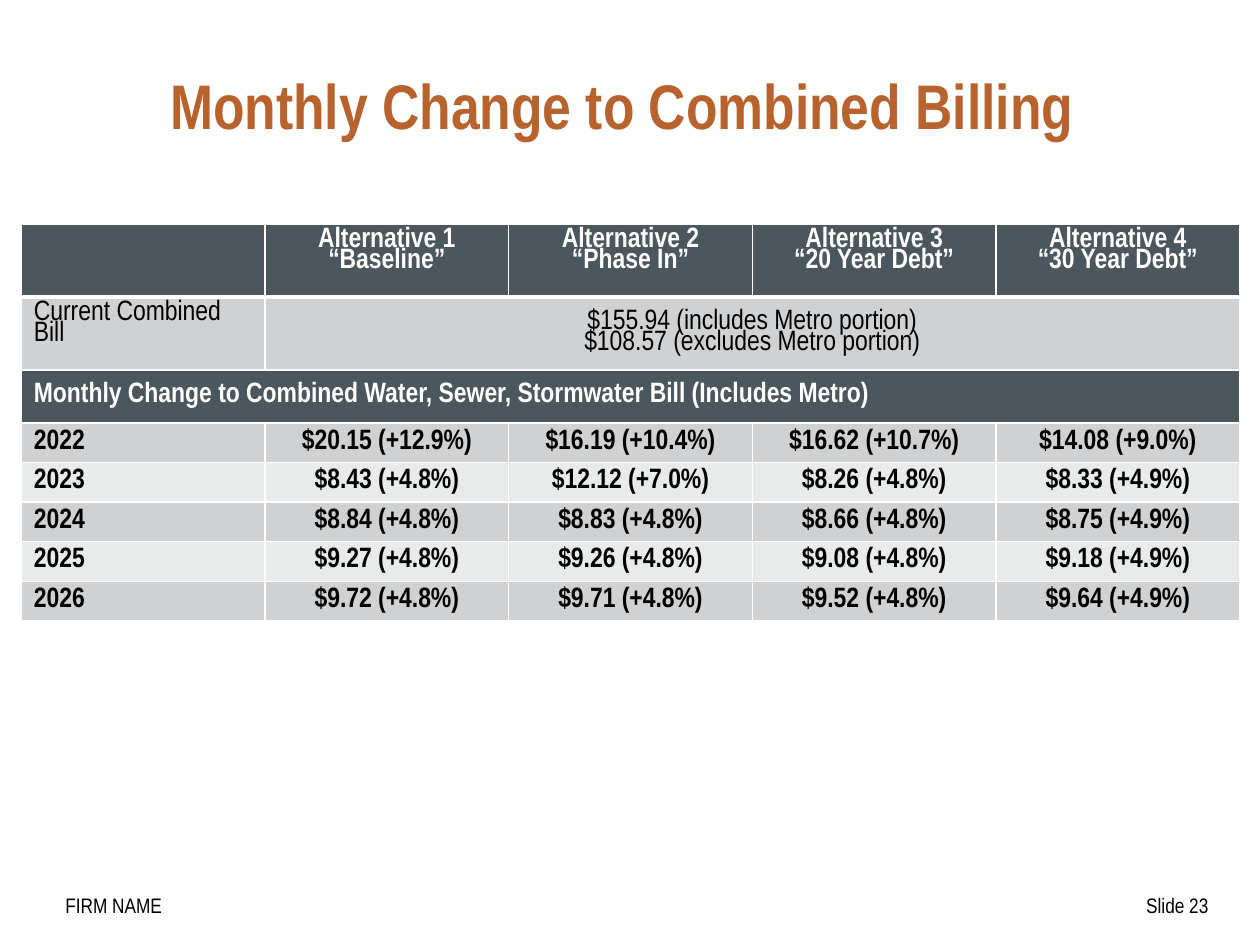
from lxml import etree
from pptx import Presentation
from pptx.dml import color
from pptx.enum import text
from pptx.oxml import ns
from pptx.util import Cm, Pt

FONT = "Arial Narrow"
COLORS = {
    "title": "B8632E", "header": "4B575D", "odd": "D0D1D2",
    "even": "E9EAEA", "white": "FFFFFF", "black": "000000",
}
LEFT, CENTER, RIGHT = text.PP_ALIGN.LEFT, text.PP_ALIGN.CENTER, text.PP_ALIGN.RIGHT
TOP, MIDDLE = text.MSO_ANCHOR.TOP, text.MSO_ANCHOR.MIDDLE
ROWS = [
    ["", "Alternative 1\n“Baseline”", "Alternative 2\n“Phase In”",
     "Alternative 3\n“20 Year Debt”", "Alternative 4\n“30 Year Debt”"],
    ["Current Combined Bill",
     "$155.94 (includes Metro portion)\n$108.57 (excludes Metro portion)"],
    ["Monthly Change to Combined Water, Sewer, Stormwater Bill (Includes Metro)"],
    ["2022", "$20.15 (+12.9%)", "$16.19 (+10.4%)", "$16.62 (+10.7%)", "$14.08 (+9.0%)"],
    ["2023", "$8.43 (+4.8%)", "$12.12 (+7.0%)", "$8.26 (+4.8%)", "$8.33 (+4.9%)"],
    ["2024", "$8.84 (+4.8%)", "$8.83 (+4.8%)", "$8.66 (+4.8%)", "$8.75 (+4.9%)"],
    ["2025", "$9.27 (+4.8%)", "$9.26 (+4.8%)", "$9.08 (+4.8%)", "$9.18 (+4.9%)"],
    ["2026", "$9.72 (+4.8%)", "$9.71 (+4.8%)", "$9.52 (+4.8%)", "$9.64 (+4.9%)"],
]
ROW_HEIGHTS = [1.47, 1.47, 1.07] + [0.79] * 5
HEADER, CURRENT, SECTION = 0, 1, 2


def rgb(name):
    return color.RGBColor.from_string(COLORS[name])


def write(tf, content, size, fill, bold=False, align=LEFT, spacing=None):
    for i, line in enumerate(content.split("\n")):
        p = tf.paragraphs[0] if i == 0 else tf.add_paragraph()
        p.alignment = align
        p.line_spacing = spacing
        r = p.add_run()
        r.text = line
        r.font.name, r.font.size, r.font.bold = FONT, Pt(size), bold
        r.font.color.rgb = rgb(fill)


def add_label(s, box, content, size, fill, bold=False, align=LEFT):
    tf = s.shapes.add_textbox(*map(Cm, box)).text_frame
    tf.word_wrap = True
    tf.vertical_anchor = MIDDLE
    write(tf, content, size, fill, bold, align)


def set_borders(cell, widths):
    tc_pr = cell._tc.get_or_add_tcPr()
    for side, width in zip("LRTB", widths):
        ln = etree.SubElement(tc_pr, ns.qn(f"a:ln{side}"), w=str(Pt(width)))
        fill = etree.SubElement(ln, ns.qn("a:solidFill"))
        etree.SubElement(fill, ns.qn("a:srgbClr"), val=COLORS["white"])


def add_bill_table(s, left, top, width):
    n_cols = len(ROWS[0])
    frame = s.shapes.add_table(len(ROWS), n_cols, Cm(left), Cm(top),
                               Cm(width), Cm(sum(ROW_HEIGHTS)))
    table = frame.table
    for column in table.columns:
        column.width = Cm(width / n_cols)
    for i, (values, height) in enumerate(zip(ROWS, ROW_HEIGHTS)):
        table.rows[i].height = Cm(height)
        dark = i in (HEADER, SECTION)
        band = "header" if dark else "odd" if i % 2 else "even"
        for j in range(n_cols):
            cell = table.cell(i, j)
            set_borders(cell, (1, 1, 3 if i == CURRENT else 1, 3 if i == HEADER else 1))
            cell.fill.solid()
            cell.fill.fore_color.rgb = rgb(band)
            top_row = i == HEADER or (i, j) == (CURRENT, 0)
            cell.vertical_anchor = TOP if top_row else MIDDLE
            if j < len(values) and values[j]:
                write(cell.text_frame, values[j], 16, "white" if dark else "black",
                      i != CURRENT, CENTER if j else LEFT, 0.8)
        if len(values) < n_cols:
            table.cell(i, len(values) - 1).merge(table.cell(i, n_cols - 1))


def add_footer(s, left, top, width):
    height = 0.76
    add_label(s, (left, top, 3.6, height), "FIRM NAME", 12, "black")
    add_label(s, (left + width - 2.5, top, 2.5, height), "Slide 23", 12, "black", align=RIGHT)


def main():
    prs = Presentation()
    prs.slide_width, prs.slide_height = Cm(25.4), Cm(19.05)
    s = prs.slides.add_slide(prs.slide_layouts[6])
    add_footer(s, 1.07, 17.86, 23.54)
    add_label(s, (3.18, 0.84, 20.96, 2.54), "Monthly Change to Combined Billing",
              36, "title", bold=True)
    add_bill_table(s, 0.43, 4.52, 24.56)
    prs.save("out.pptx")


if __name__ == "__main__":
    main()
